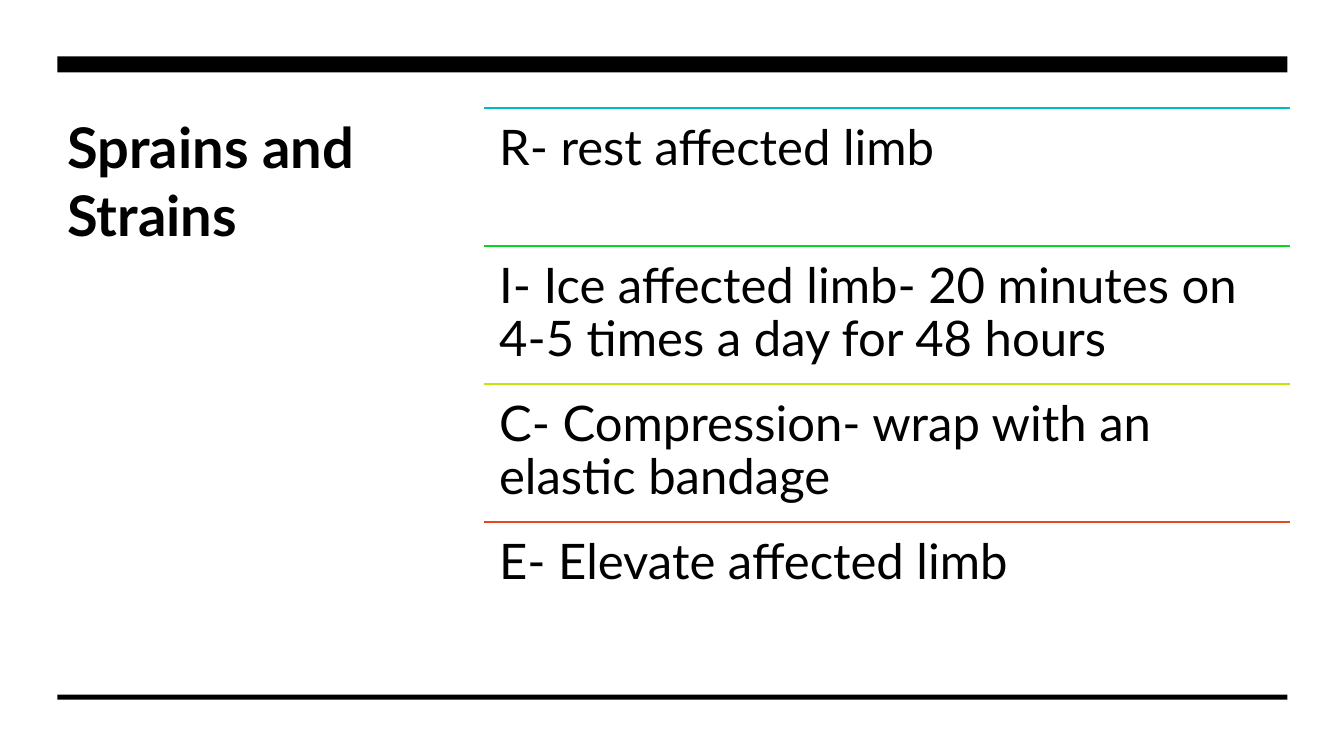
"""Build the Sprains and Strains slide with the four R-I-C-E steps."""
import pptx
import pptx.dml.color
import pptx.enum.shapes
import pptx.enum.text
import pptx.util
from lxml import etree
from pptx.oxml.ns import qn

Inches = pptx.util.Inches
Pt = pptx.util.Pt
RGBColor = pptx.dml.color.RGBColor

BLACK = RGBColor(0x00, 0x00, 0x00)
TEAL = RGBColor(0x00, 0xBA, 0xC8)
GREEN = RGBColor(0x08, 0xD6, 0x1E)
LIME = RGBColor(0xC3, 0xE3, 0x11)
ORANGE = RGBColor(0xE6, 0x48, 0x23)
FONT = "Lato"

TITLE = "Sprains and Strains"
STEPS = [
    ("R- rest affected limb", TEAL),
    ("I- Ice affected limb- 20 minutes on 4-5 times a day for 48 hours", GREEN),
    ("C- Compression- wrap with an elastic bandage", LIME),
    ("E- Elevate affected limb", ORANGE),
]
BARS = [(0.56, 0.16), (6.89, 0.05)]

MARGIN, BAR_WIDTH = 0.57, 12.2
CONTENT_TOP = 1.07
STEP_LEFT, STEP_WIDTH, STEP_HEIGHT = 4.8, 7.99, 1.37


def add_text(slide, box, words, size, bold=False, insets=(0.1, 0.05)):
    frame = slide.shapes.add_textbox(*map(Inches, box)).text_frame
    frame.word_wrap = True
    frame.auto_size = pptx.enum.text.MSO_AUTO_SIZE.NONE
    frame.vertical_anchor = pptx.enum.text.MSO_ANCHOR.TOP
    frame.margin_left = frame.margin_right = Inches(insets[0])
    frame.margin_top = frame.margin_bottom = Inches(insets[1])
    paragraph = frame.paragraphs[0]
    run = paragraph.add_run()
    run.text = words
    run.font.name = FONT
    run.font.size = Pt(size)
    run.font.bold = bold
    run.font.color.rgb = BLACK
    return paragraph


def add_bar(slide, top, height):
    bar = slide.shapes.add_shape(
        pptx.enum.shapes.MSO_SHAPE.RECTANGLE,
        *map(Inches, (MARGIN, top, BAR_WIDTH, height)))
    bar.shadow.inherit = False
    bar.fill.solid()
    bar.fill.fore_color.rgb = BLACK
    bar.line.fill.background()


def add_step(slide, top, words, color):
    rule = slide.shapes.add_connector(
        pptx.enum.shapes.MSO_CONNECTOR.STRAIGHT,
        *map(Inches, (STEP_LEFT, top, STEP_LEFT + STEP_WIDTH, top)))
    rule.line.color.rgb = color
    rule.line.width = Pt(1.5)
    etree.SubElement(rule._element.spPr, qn("a:effectLst"))
    step = add_text(slide, (STEP_LEFT, top, STEP_WIDTH, STEP_HEIGHT),
                    words, 35, insets=(0.15, 0.15))
    step.line_spacing = 0.9


def main():
    deck = pptx.Presentation()
    deck.slide_width, deck.slide_height = Inches(13.33), Inches(7.5)
    slide = deck.slides.add_slide(deck.slide_layouts[6])
    add_text(slide, (MARGIN, CONTENT_TOP, 3.45, 4.45), TITLE, 40, bold=True)
    for top, height in BARS:
        add_bar(slide, top, height)
    for row, (words, color) in enumerate(STEPS):
        add_step(slide, CONTENT_TOP + row * STEP_HEIGHT, words, color)
    deck.save("out.pptx")


if __name__ == "__main__":
    main()
